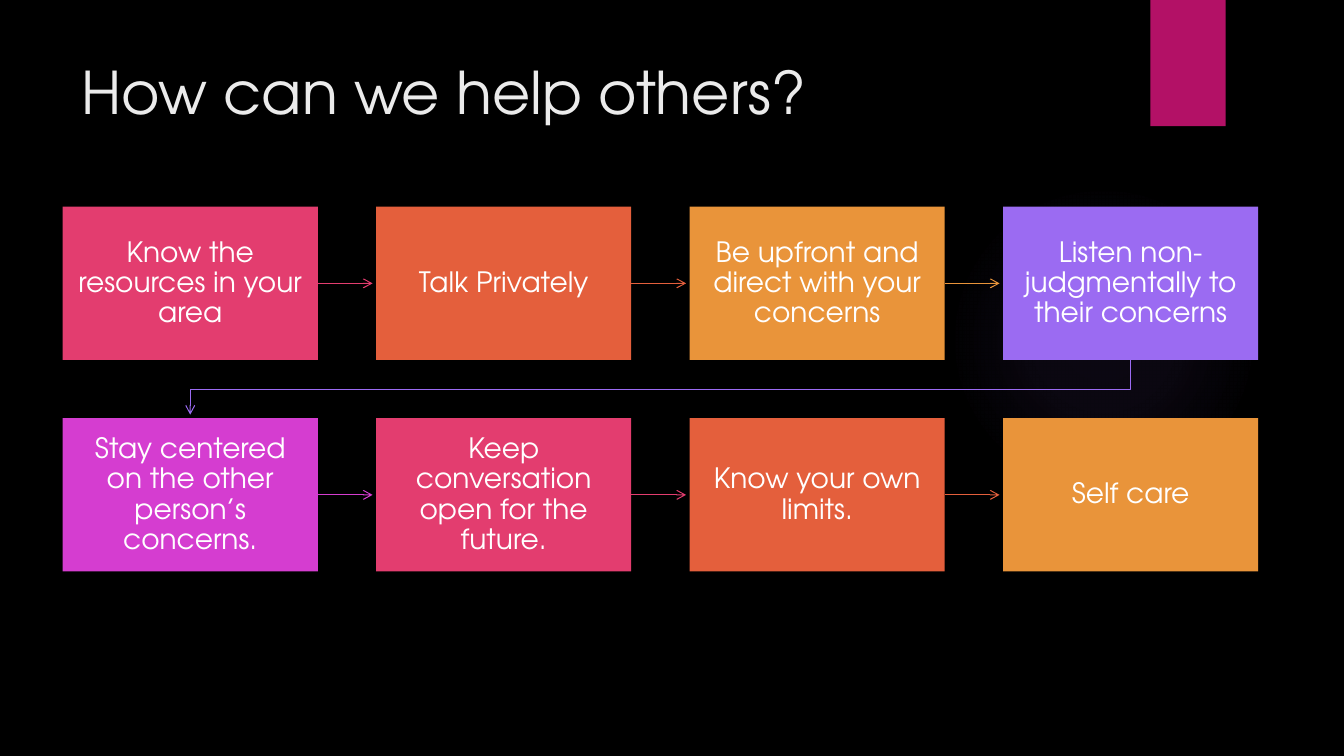
from dataclasses import dataclass

from lxml import etree
from pptx import Presentation
from pptx.dml.color import RGBColor
from pptx.enum.shapes import MSO_CONNECTOR, MSO_SHAPE
from pptx.enum.text import MSO_ANCHOR, PP_ALIGN
from pptx.oxml import parse_xml
from pptx.oxml.ns import nsdecls, qn
from pptx.util import Cm, Pt

RECT = MSO_SHAPE.RECTANGLE
OVAL = MSO_SHAPE.OVAL
STRAIGHT = MSO_CONNECTOR.STRAIGHT
TOP = MSO_ANCHOR.TOP
MIDDLE = MSO_ANCHOR.MIDDLE
LEFT = PP_ALIGN.LEFT
CENTER = PP_ALIGN.CENTER


@dataclass(frozen=True)
class Theme:
    font: str = "TeX Gyre Adventor"
    back: str = "000000"
    title: str = "EBEBEB"
    text: str = "FFFFFF"
    tab: str = "B31166"
    glow: str = "9B6BF2"
    cards: tuple = ("E33D6F", "E45F3C", "E9943A", "9B6BF2", "D53DD0")
    title_size: float = 42
    card_size: float = 20
    line_width: float = 0.75


class Deck:
    def __init__(self, theme):
        self.theme = theme
        self.file = Presentation()
        self.file.slide_width = Cm(33.87)
        self.file.slide_height = Cm(19.05)
        self.slide = self.file.slides.add_slide(self.file.slide_layouts[6])
        self.shapes = self.slide.shapes
        fill = self.slide.background.fill
        fill.solid()
        fill.fore_color.rgb = RGBColor.from_string(theme.back)

    def block(self, kind, left, top, width, height, color):
        shape = self.shapes.add_shape(kind, Cm(left), Cm(top), Cm(width), Cm(height))
        shape.shadow.inherit = False
        shape.fill.solid()
        shape.fill.fore_color.rgb = RGBColor.from_string(color)
        shape.line.fill.background()
        return shape

    def glow(self, left, top, size):
        color = self.theme.glow
        shape = self.block(OVAL, left, top, size, size, color)
        stops = "".join(
            f'<a:gs pos="{place * 1000}"><a:srgbClr val="{color}">'
            f'<a:alpha val="{alpha * 1000}"/></a:srgbClr></a:gs>'
            for place, alpha in ((0, 7), (36, 6), (69, 0))
        )
        blend = parse_xml(
            f'<a:gradFill {nsdecls("a")}><a:gsLst>{stops}</a:gsLst>'
            '<a:path path="circle"><a:fillToRect l="50000" t="50000" '
            'r="50000" b="50000"/></a:path></a:gradFill>'
        )
        props = shape.element.spPr
        props.replace(props.find(qn("a:solidFill")), blend)

    def label(self, shape, words, size, color, align, anchor, side, edge):
        frame = shape.text_frame
        frame.word_wrap = True
        frame.vertical_anchor = anchor
        frame.margin_left = frame.margin_right = Cm(side)
        frame.margin_top = frame.margin_bottom = Cm(edge)
        para = frame.paragraphs[0]
        para.alignment = align
        run = para.add_run()
        run.text = words
        run.font.name = self.theme.font
        run.font.size = Pt(size)
        run.font.color.rgb = RGBColor.from_string(color)
        return para

    def title(self, words, left, top, width, height):
        box = self.shapes.add_textbox(Cm(left), Cm(top), Cm(width), Cm(height))
        self.label(box, words, self.theme.title_size, self.theme.title,
                   LEFT, TOP, 0.25, 0.13)

    def card(self, words, left, top, width, height, color):
        shape = self.block(RECT, left, top, width, height, color)
        para = self.label(shape, words, self.theme.card_size, self.theme.text,
                          CENTER, MIDDLE, 0.3, 0.33)
        para.line_spacing = 0.9

    def ink(self, shape, color):
        shape.line.color.rgb = RGBColor.from_string(color)
        shape.line.width = Pt(self.theme.line_width)
        props = shape.element.spPr
        etree.SubElement(props.find(qn("a:ln")), qn("a:tailEnd"), type="arrow")
        if props.find(qn("a:effectLst")) is None:
            etree.SubElement(props, qn("a:effectLst"))

    def arrow(self, left, top, width, color):
        line = self.shapes.add_connector(
            STRAIGHT, Cm(left), Cm(top), Cm(left + width), Cm(top))
        self.ink(line, color)

    def bend(self, points, color):
        start, *rest = [(Cm(x), Cm(y)) for x, y in points]
        pen = self.shapes.build_freeform(*start)
        pen.add_line_segments(rest, close=False)
        shape = pen.convert_to_shape()
        shape.fill.background()
        shape.shadow.inherit = False
        self.ink(shape, color)


def main():
    theme = Theme()
    deck = Deck(theme)
    deck.glow(23.9, 4.65, 7.82)
    deck.block(RECT, 28.99, 0, 1.9, 3.18, theme.tab)
    deck.title("How can we help others?", 1.8, 1.27, 26.14, 3.89)

    steps = (
        "Know the resources in your area",
        "Talk Privately",
        "Be upfront and direct with your concerns",
        "Listen non-judgmentally to their concerns",
        "Stay centered on the other person’s concerns.",
        "Keep conversation open for the future.",
        "Know your own limits.",
        "Self care",
    )
    cols = 4
    left, top = 1.58, 5.21
    width, height = 6.43, 3.86
    across, down = 7.9, 5.33
    reach = 1.38
    for count, words in enumerate(steps):
        row, col = divmod(count, cols)
        x, y = left + col * across, top + row * down
        color = theme.cards[count % len(theme.cards)]
        if col < cols - 1:
            deck.arrow(x + width, y + height / 2, reach, color)
        elif count < len(steps) - 1:
            near, far = x + width / 2, left + width / 2
            base = y + height
            turn = base + (down - height) / 2
            deck.bend(((near, base), (near, turn), (far, turn),
                       (far, base + reach)), color)
        deck.card(words, x, y, width, height, color)

    deck.file.save("out.pptx")


if __name__ == "__main__":
    main()
